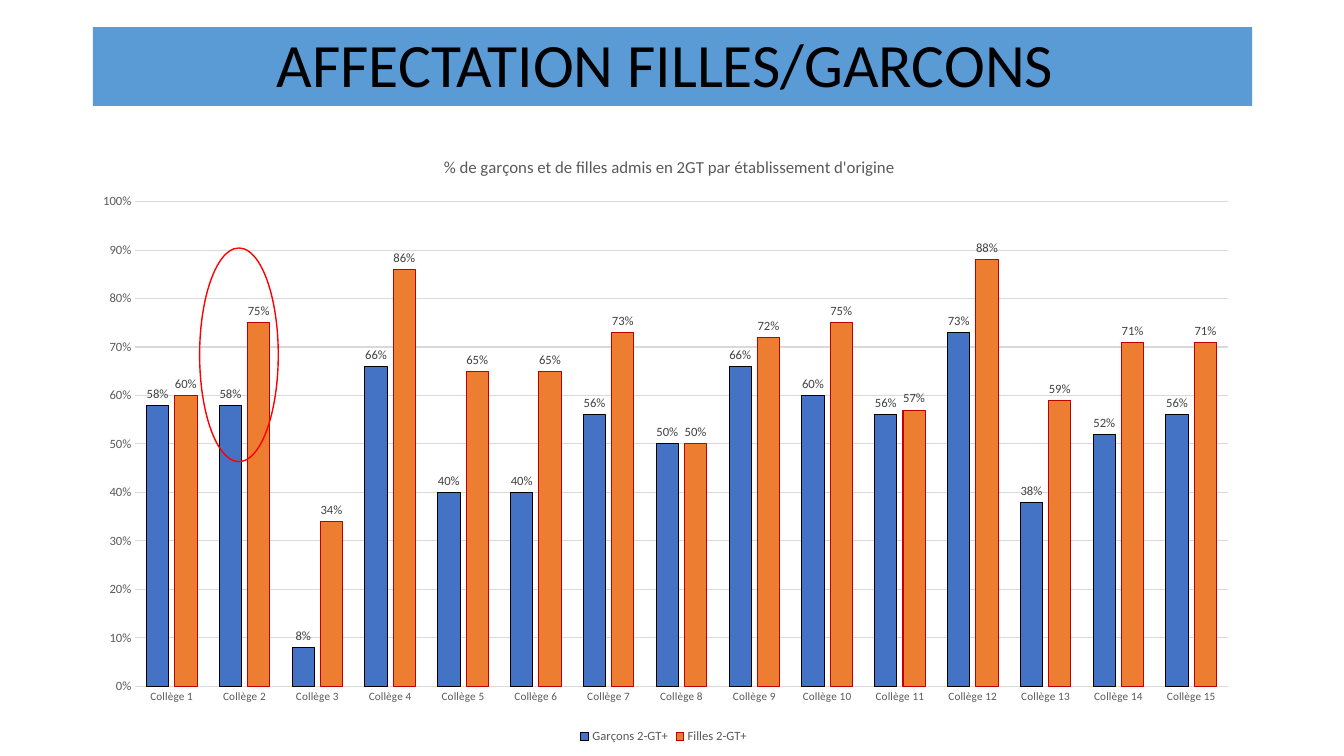
from pptx import Presentation
from pptx.chart.data import CategoryChartData
from pptx.dml.color import RGBColor
from pptx.enum.chart import (XL_CHART_TYPE, XL_LABEL_POSITION,
                             XL_LEGEND_POSITION, XL_TICK_MARK)
from pptx.enum.shapes import MSO_SHAPE
from pptx.enum.text import MSO_ANCHOR, PP_ALIGN
from pptx.oxml import parse_xml
from pptx.oxml.ns import nsdecls, qn
from pptx.util import Inches, Pt

COLORS = {
    "banner": "5B9BD5", "black": "000000", "axis": "595959", "label": "404040",
    "grid": "D9D9D9", "boys": "4472C4", "girls": "ED7D31",
    "girls_line": "C00000", "highlight": "FF0000",
}
FONT = "Calibri"
PERCENT = "#,##0%"
COLLEGES = [f"Collège {number}" for number in range(1, 16)]
# Name, fill, outline, percentages by college
SERIES = [
    ("Garçons 2-GT+", "boys", "black",
     [58, 58, 8, 66, 40, 40, 56, 50, 66, 60, 56, 73, 38, 52, 56]),
    ("Filles 2-GT+", "girls", "girls_line",
     [60, 75, 34, 86, 65, 65, 73, 50, 72, 75, 57, 88, 59, 71, 71]),
]


def color(name):
    return RGBColor.from_string(COLORS[name])


def box(left, top, width, height):
    return [Inches(value) for value in (left, top, width, height)]


def set_font(font, size, color_name):
    font.name = FONT
    font.size = Pt(size)
    font.bold = False
    font.color.rgb = color(color_name)


def set_line(line, color_name, width=0.75):
    line.color.rgb = color(color_name)
    line.width = Pt(width)


def set_layout(element, index, **shares):
    """Place a chart part by shares of the chart's size."""
    for layout in element.findall(qn("c:layout")):
        element.remove(layout)
    modes = '<c:xMode val="edge"/><c:yMode val="edge"/>'
    target = '<c:layoutTarget val="inner"/>' if "w" in shares else ""
    values = "".join(f'<c:{key} val="{value}"/>' for key, value in shares.items())
    element.insert(index, parse_xml(
        f'<c:layout {nsdecls("c")}><c:manualLayout>{target}{modes}{values}'
        '</c:manualLayout></c:layout>'))


def add_banner(slide, text):
    title = slide.shapes.title
    title.left, title.top, title.width, title.height = box(0.92, 0.27, 11.5, 0.78)
    title.fill.solid()
    title.fill.fore_color.rgb = color("banner")
    title.text_frame.text = text
    title.text_frame.vertical_anchor = MSO_ANCHOR.BOTTOM
    paragraph = title.text_frame.paragraphs[0]
    paragraph.alignment = PP_ALIGN.CENTER
    paragraph.line_spacing = 0.9
    set_font(paragraph.font, 44, "black")


def format_axes(chart):
    for axis, size in ((chart.category_axis, 8), (chart.value_axis, 9)):
        axis.major_tick_mark = axis.minor_tick_mark = XL_TICK_MARK.NONE
        set_font(axis.tick_labels.font, size, "axis")
    set_line(chart.category_axis.format.line, "grid")
    values = chart.value_axis
    values.minimum_scale, values.maximum_scale, values.major_unit = 0, 1, 0.1
    values.format.line.fill.background()
    set_line(values.major_gridlines.format.line, "grid")
    values.tick_labels.number_format = PERCENT
    values.tick_labels.number_format_is_linked = False


def format_series(series, fill, outline):
    series.format.fill.solid()
    series.format.fill.fore_color.rgb = color(fill)
    set_line(series.format.line, outline)
    labels = series.data_labels
    labels.show_value = True
    labels.position = XL_LABEL_POSITION.OUTSIDE_END
    labels.number_format = PERCENT
    labels.number_format_is_linked = False
    set_font(labels.font, 9, "label")


def add_admissions_chart(slide, title):
    data = CategoryChartData(number_format=PERCENT)
    data.categories = COLLEGES
    for name, _, _, percentages in SERIES:
        data.add_series(name, [value / 100 for value in percentages])
    chart = slide.shapes.add_chart(XL_CHART_TYPE.COLUMN_CLUSTERED,
                                   *box(0.76, 1.33, 11.65, 6.09), data).chart
    set_font(chart.font, 10, "black")

    # Title, plot area and legend
    chart.has_title = True
    chart.chart_title.text_frame.text = title
    set_font(chart.chart_title.text_frame.paragraphs[0].font, 12, "axis")
    set_layout(chart.element.find(".//" + qn("c:title")), 1, x=0.31, y=0.03)
    set_layout(chart.element.find(".//" + qn("c:plotArea")), 0,
               x=0.05, y=0.11, w=0.93, h=0.79)
    chart.has_legend = True
    chart.legend.position = XL_LEGEND_POSITION.BOTTOM
    chart.legend.include_in_layout = False
    set_font(chart.legend.font, 9, "axis")

    # Columns
    plot = chart.plots[0]
    plot.gap_width, plot.overlap, plot.vary_by_categories = 100, -27, False
    for series, (_, fill, outline, _) in zip(plot.series, SERIES):
        format_series(series, fill, outline)
    format_axes(chart)


def add_highlight(slide):
    ellipse = slide.shapes.add_shape(MSO_SHAPE.OVAL, *box(1.98, 2.46, 0.78, 2.12))
    ellipse.shadow.inherit = False
    ellipse.fill.background()
    set_line(ellipse.line, "highlight", 1)


def main():
    presentation = Presentation()
    presentation.slide_width, presentation.slide_height = Inches(13.33), Inches(7.5)
    slide = presentation.slides.add_slide(presentation.slide_layouts[5])
    add_banner(slide, "AFFECTATION FILLES/GARCONS ")
    add_admissions_chart(
        slide, "% de garçons et de filles admis en 2GT par établissement d'origine")
    add_highlight(slide)
    presentation.save("out.pptx")


if __name__ == "__main__":
    main()
